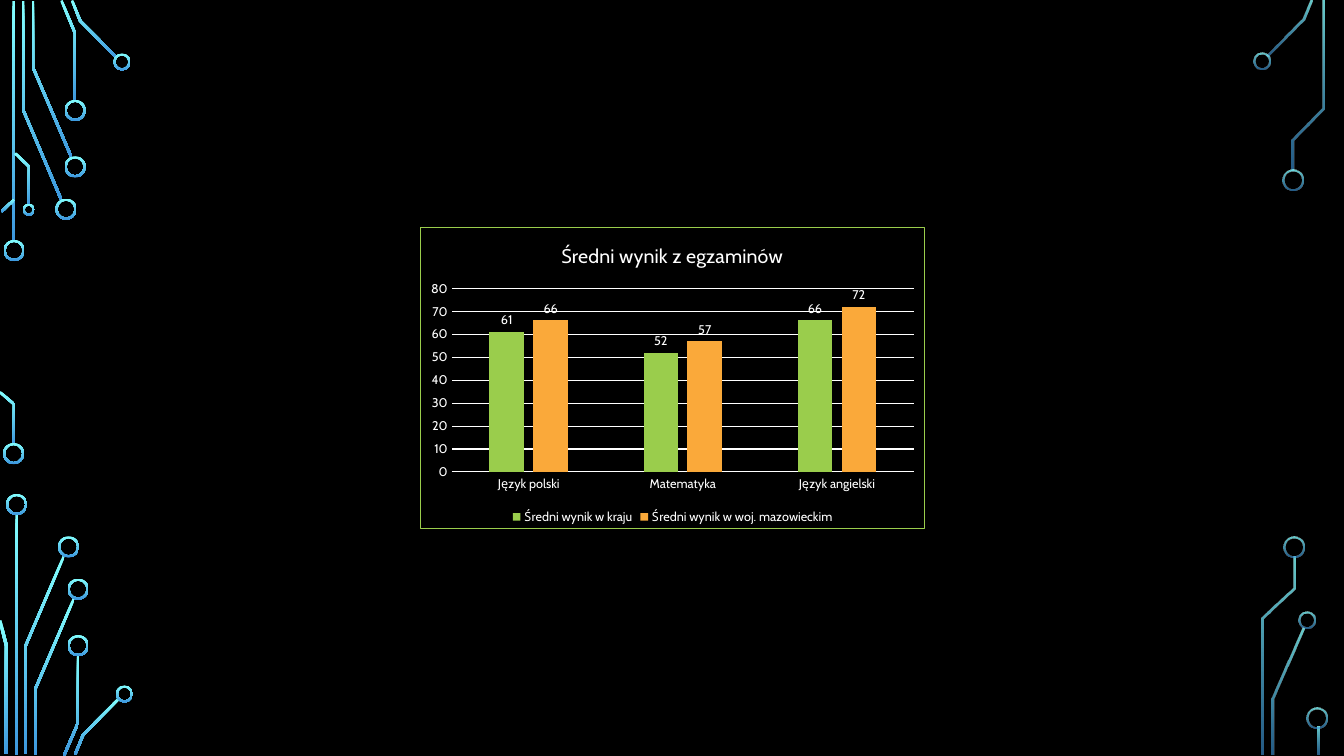
from dataclasses import dataclass
from math import hypot
from typing import Any

from lxml.etree import SubElement
from pptx import Presentation
from pptx.chart.data import CategoryChartData
from pptx.dml.color import RGBColor
from pptx.enum.chart import XL_CHART_TYPE as ChartType
from pptx.enum.chart import XL_LABEL_POSITION as LabelPos
from pptx.enum.chart import XL_LEGEND_POSITION as LegendPos
from pptx.enum.chart import XL_TICK_MARK as TickMark
from pptx.enum.shapes import MSO_SHAPE as Preset
from pptx.oxml import parse_xml
from pptx.oxml.ns import nsdecls, qn
from pptx.util import Inches, Pt

BLACK = RGBColor(0x00, 0x00, 0x00)
WHITE = RGBColor(0xFF, 0xFF, 0xFF)
CYAN = RGBColor(0x82, 0xFF, 0xFF)
BLUE = RGBColor(0x3D, 0x97, 0xDE)
GREEN = RGBColor(0x9A, 0xCD, 0x4C)
ORANGE = RGBColor(0xFA, 0xA9, 0x3A)
FONT = "Cabin"

# The slide is a grid of 1333 columns by 750 rows
CELL = Inches(0.01)
COLUMNS, ROWS = 1333, 750
RIM = 2

Opacity = tuple[int, int]
BRIGHT: Opacity = (100, 100)
DIM: Opacity = (80, 60)


@dataclass(frozen=True)
class Trace:
    points: list[tuple[float, float]]
    opacity: Opacity = BRIGHT
    width: float = 2.5


@dataclass(frozen=True)
class Ring:
    column: float
    row: float
    size: float = 21
    opacity: Opacity = BRIGHT


@dataclass(frozen=True)
class Score:
    label: str
    values: tuple[int, ...]
    color: RGBColor


TRACES = [
    # Top left
    Trace([(13.5, 1), (13.5, 240)]),
    Trace([(61, 198.5), (23, 109), (23, 1)]),
    Trace([(71, 156.5), (32.5, 66.5), (32.5, 1)]),
    Trace([(74.5, 100), (74.5, 33), (61, 0.5)]),
    Trace([(115.5, 57), (79.5, 20.5), (71.5, 0.5)]),
    Trace([(1.5, 210), (14, 198)]),
    Trace([(29, 203), (29, 165.5), (15, 152)]),
    # Bottom left
    Trace([(14, 441), (14, 401), (0, 389)]),
    Trace([(16.5, 510), (16.5, 749)]),
    Trace([(25.5, 748), (25.5, 640.5), (63.5, 551.5)]),
    Trace([(6.5, 748), (6.5, 641), (0, 615.5)], width=3),
    Trace([(35.5, 749), (35.5, 682.5), (73.5, 593.5)]),
    Trace([(77.5, 650), (77.5, 717), (63.5, 749.5)]),
    Trace([(74.5, 748.5), (82.5, 729), (118, 693)]),
    # Right
    Trace([(1257, 55.5), (1292.5, 19.5), (1300.5, 0.5)], DIM),
    Trace([(1282, 169), (1282, 138.5), (1312.5, 107.5), (1312.5, 1)], DIM),
    Trace([(1262.5, 749), (1262.5, 693.5), (1293, 623.5)], DIM),
    Trace([(1252.5, 749), (1252.5, 613.5), (1283.5, 583.5), (1283.5, 552)], DIM),
    Trace([(1307.5, 721), (1307.5, 749)], DIM),
]
RINGS = [
    Ring(14, 248.5), Ring(65.5, 207.5), Ring(74.5, 165.5), Ring(74.5, 109.5),
    Ring(121, 61.5, 17), Ring(28.5, 208, 12), Ring(13.5, 450),
    Ring(16.5, 500.5), Ring(68, 542.5), Ring(77.5, 584.5), Ring(77.5, 640.5),
    Ring(123.5, 688.5, 17),
    Ring(1251.5, 60.5, 17, DIM), Ring(1282.5, 178.5, opacity=DIM),
    Ring(1283, 542.5, opacity=DIM), Ring(1296.5, 615.5, 17, DIM),
    Ring(1306.5, 712, opacity=DIM),
]
SUBJECTS = ["Język polski", "Matematyka", "Język angielski"]
SCORES = [
    Score("Średni wynik w kraju", (61, 52, 66), GREEN),
    Score("Średni wynik w woj. mazowieckim", (66, 57, 72), ORANGE),
]
SMALL = {"size": Pt(9), "name": FONT, "bold": False}


def apply(target: Any, formats: dict[str, Any]) -> None:
    for name, value in formats.items():
        setattr(target, name, value)


def style_font(font: Any, formats: dict[str, Any]) -> None:
    apply(font, formats)
    font.color.rgb = WHITE


def style_line(line: Any, color: RGBColor) -> None:
    line.color.rgb = color
    line.width = Pt(0.75)


def paint(part: Any, opacity: Opacity) -> None:
    """Fill a circuit part with the cyan to blue gradient, top to bottom."""
    part.shadow.inherit = False
    part.line.fill.background()
    part.fill.gradient()
    part.fill.gradient_angle = 270
    for stop, color in zip(part.fill.gradient_stops, (CYAN, BLUE)):
        stop.color.rgb = color
    for color, percent in zip(part.element.spPr.iter(qn("a:srgbClr")), opacity):
        if percent < 100:
            SubElement(color, qn("a:alpha")).set("val", str(percent * 1000))


def ribbon(trace: Trace) -> list[tuple[float, float]]:
    """Outline of a trace: its centre line shifted to both sides, mitred."""
    points, normals = trace.points, []
    for (x1, y1), (x2, y2) in zip(points, points[1:]):
        length = hypot(x2 - x1, y2 - y1)
        normals.append(((y1 - y2) / length, (x2 - x1) / length))
    left, right = [], []
    befores, afters = normals[:1] + normals, normals + normals[-1:]
    for (x, y), (ax, ay), (bx, by) in zip(points, befores, afters):
        reach = trace.width / 2 / (1 + ax * bx + ay * by)
        dx, dy = (ax + bx) * reach, (ay + by) * reach
        left.append((x + dx, y + dy))
        right.append((x - dx, y - dy))
    return [(x * CELL, y * CELL) for x, y in left + right[::-1]]


def draw_trace(slide: Any, trace: Trace) -> None:
    start, *rest = ribbon(trace)
    builder = slide.shapes.build_freeform(*start)
    builder.add_line_segments(rest, close=True)
    paint(builder.convert_to_shape(), trace.opacity)


def draw_ring(slide: Any, ring: Ring) -> None:
    left, top = (round((centre - ring.size / 2) * CELL) for centre in (ring.column, ring.row))
    node = slide.shapes.add_shape(Preset.DONUT, left, top, ring.size * CELL, ring.size * CELL)
    node.adjustments[0] = RIM / ring.size
    paint(node, ring.opacity)


def draw_results(slide: Any) -> None:
    data = CategoryChartData(number_format="###0")
    data.categories = SUBJECTS
    for score in SCORES:
        data.add_series(score.label, score.values)
    place = (columns * CELL for columns in (417, 225, 500, 300))
    results = slide.shapes.add_chart(ChartType.COLUMN_CLUSTERED, *place, data).chart
    style_font(results.font, {"size": Pt(10), "name": FONT})

    # Title and legend
    results.has_title = True
    heading = results.chart_title
    heading.include_in_layout = False
    heading.text_frame.text = "Średni wynik z egzaminów"
    style_font(heading.text_frame.paragraphs[0].runs[0].font, {**SMALL, "size": Pt(14)})
    results.has_legend = True
    apply(results.legend, {"position": LegendPos.BOTTOM, "include_in_layout": False})
    style_font(results.legend.font, SMALL)

    # Axes
    subjects, points = results.category_axis, results.value_axis
    for axis in (subjects, points):
        apply(axis, {"major_tick_mark": TickMark.NONE, "minor_tick_mark": TickMark.NONE})
        style_font(axis.tick_labels.font, SMALL)
    style_line(subjects.format.line, WHITE)
    apply(points, {"minimum_scale": 0, "maximum_scale": 80, "major_unit": 10})
    apply(points.tick_labels, {"number_format": "###0", "number_format_is_linked": False})
    points.format.line.fill.background()
    style_line(points.major_gridlines.format.line, WHITE)

    # Columns
    plot = results.plots[0]
    apply(plot, {"gap_width": 219, "overlap": -27, "vary_by_categories": False})
    for series, score in zip(plot.series, SCORES):
        series.format.fill.solid()
        series.format.fill.fore_color.rgb = score.color
        series.format.line.fill.background()
        labels = series.data_labels
        apply(labels, {"show_value": True, "position": LabelPos.OUTSIDE_END,
                       "number_format": "###0", "number_format_is_linked": False})
        style_font(labels.font, SMALL)

    # Black panel with a green border
    panel = parse_xml(
        f'<c:spPr {nsdecls("c", "a")}><a:solidFill><a:srgbClr val="{BLACK}"/></a:solidFill>'
        f'<a:ln w="{Pt(0.75)}"><a:solidFill><a:srgbClr val="{GREEN}"/></a:solidFill></a:ln></c:spPr>')
    results.element.find(qn("c:chart")).addnext(panel)


def main() -> None:
    deck = Presentation()
    apply(deck, {"slide_width": COLUMNS * CELL, "slide_height": ROWS * CELL})
    slide = deck.slides.add_slide(deck.slide_layouts[6])
    slide.background.fill.solid()
    slide.background.fill.fore_color.rgb = BLACK
    for trace in TRACES:
        draw_trace(slide, trace)
    for ring in RINGS:
        draw_ring(slide, ring)
    draw_results(slide)
    deck.save("out.pptx")


if __name__ == "__main__":
    main()
